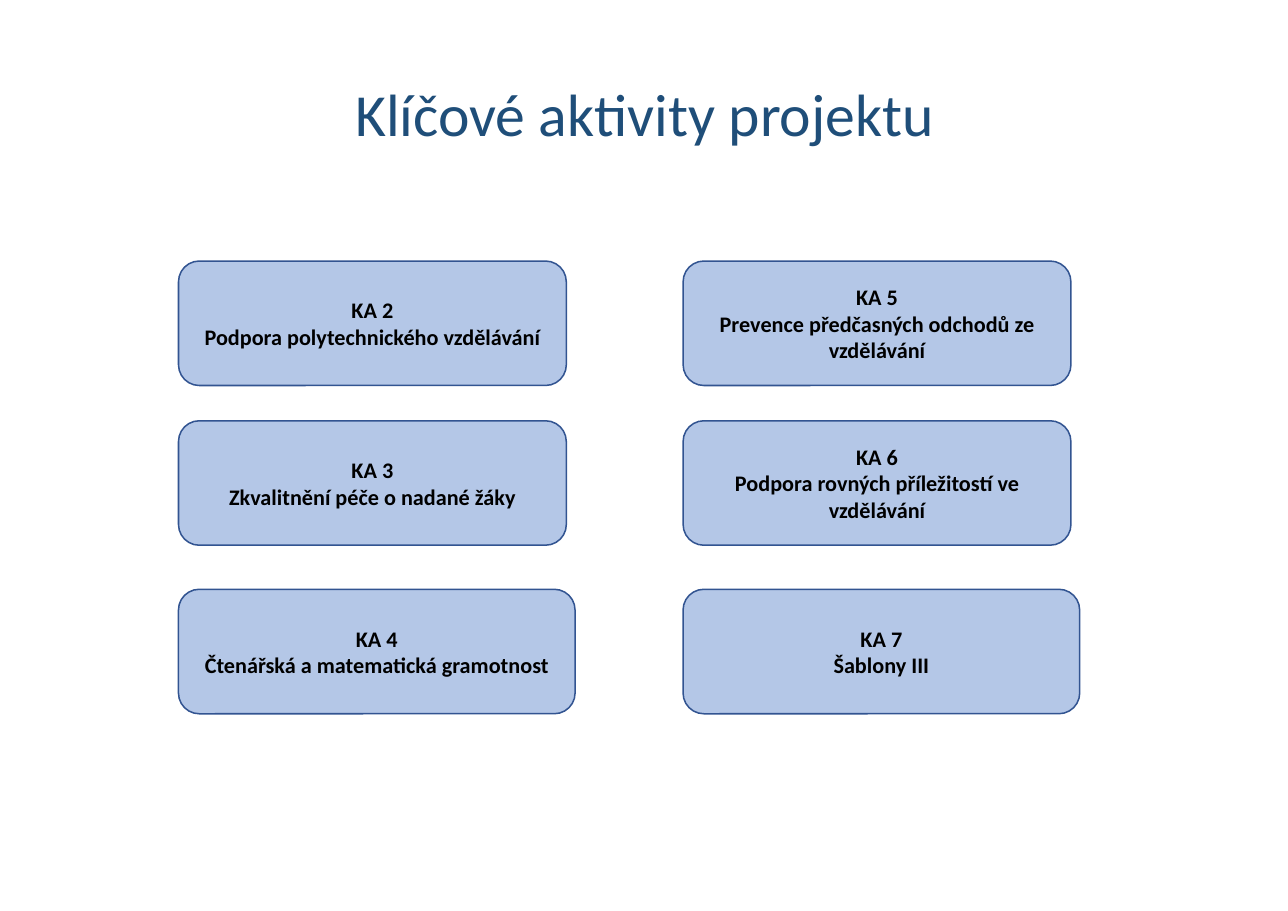
from dataclasses import dataclass

from pptx import Presentation
from pptx import util as u
from pptx.dml.color import RGBColor
from pptx.enum import shapes, text
from pptx.slide import Slide

TITLE_BLUE = RGBColor(0x1F, 0x4E, 0x79)
CARD_FILL = RGBColor(0xB4, 0xC7, 0xE7)
CARD_LINE = RGBColor(0x32, 0x54, 0x91)
BLACK = RGBColor(0, 0, 0)
FONT = "Calibri"
CARD_HEIGHT = 1.13


@dataclass(frozen=True)
class Row:
    top: float
    width: float


@dataclass(frozen=True)
class Activity:
    code: str
    name: str


COLUMN_LEFTS = (1.62, 6.2)
ROWS = (Row(2.37, 3.52), Row(3.82, 3.52), Row(5.35, 3.6))

# Activities run down the left column, then the right one
ACTIVITIES = (
    Activity("KA 2", "Podpora polytechnického vzdělávání"),
    Activity("KA 3", "Zkvalitnění péče o nadané žáky"),
    Activity("KA 4", "Čtenářská a matematická gramotnost"),
    Activity("KA 5", "Prevence předčasných odchodů ze vzdělávání"),
    Activity("KA 6", "Podpora rovných příležitostí ve vzdělávání"),
    Activity("KA 7", "Šablony III"),
)


def style_paragraph(paragraph, size: float, color: RGBColor, bold: bool = False) -> None:
    paragraph.alignment = text.PP_ALIGN.CENTER
    paragraph.font.name = FONT
    paragraph.font.size = u.Pt(size)
    paragraph.font.bold = bold
    paragraph.font.color.rgb = color


def add_title(slide: Slide, wording: str) -> None:
    title = slide.shapes.add_textbox(
        u.Inches(0.65), u.Inches(0.65), u.Inches(10.4), u.Inches(0.76))
    title.text_frame.word_wrap = True
    title.text_frame.auto_size = text.MSO_AUTO_SIZE.SHAPE_TO_FIT_TEXT
    title.text_frame.text = wording
    style_paragraph(title.text_frame.paragraphs[0], 39, TITLE_BLUE)


def add_card(slide: Slide, activity: Activity, left: float, row: Row) -> None:
    card = slide.shapes.add_shape(
        shapes.MSO_SHAPE.ROUNDED_RECTANGLE,
        u.Inches(left), u.Inches(row.top), u.Inches(row.width), u.Inches(CARD_HEIGHT))
    card.shadow.inherit = False
    card.fill.solid()
    card.fill.fore_color.rgb = CARD_FILL
    card.line.color.rgb = CARD_LINE
    card.line.width = u.Pt(1)
    frame = card.text_frame
    frame.word_wrap = True
    frame.vertical_anchor = text.MSO_ANCHOR.MIDDLE
    frame.text = f"{activity.code}\n{activity.name}"
    for paragraph in frame.paragraphs:
        style_paragraph(paragraph, 14.5, BLACK, bold=True)


def main() -> None:
    deck = Presentation()
    deck.slide_width, deck.slide_height = u.Inches(11.69), u.Inches(8.27)
    slide = deck.slides.add_slide(deck.slide_layouts[6])

    # Heading
    add_title(slide, "Klíčové aktivity projektu")

    # Grid of activity cards
    for index, activity in enumerate(ACTIVITIES):
        column, row = divmod(index, len(ROWS))
        add_card(slide, activity, COLUMN_LEFTS[column], ROWS[row])

    deck.save("out.pptx")


if __name__ == "__main__":
    main()
